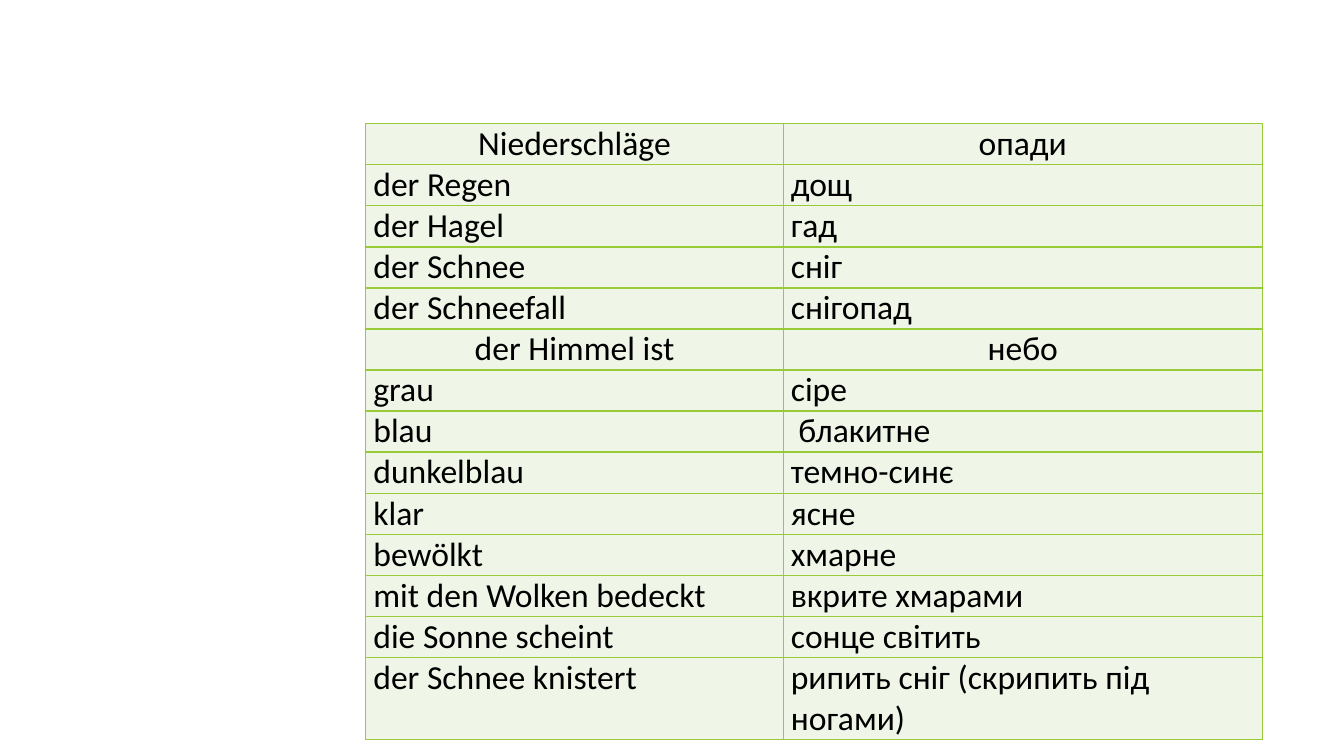
from lxml.etree import SubElement
from pptx import Presentation
from pptx.dml.color import RGBColor
from pptx.enum.text import PP_ALIGN
from pptx.oxml.ns import qn
from pptx.util import Cm, Pt

COLORS = {"text": "000000", "cell": "EFF6E8", "border": "99CB38"}

HEADINGS = {"Niederschläge", "der Himmel ist"}
VOCABULARY = [
    ("Niederschläge", "опади"),
    ("der Regen", "дощ"),
    ("der Hagel", "гад"),
    ("der Schnee", "сніг"),
    ("der Schneefall", "снігопад"),
    ("der Himmel ist", "небо"),
    ("grau", "сіре"),
    ("blau", " блакитне"),
    ("dunkelblau", "темно-синє"),
    ("klar", "ясне"),
    ("bewölkt", "хмарне"),
    ("mit den Wolken bedeckt", "вкрите хмарами"),
    ("die Sonne scheint", "сонце світить"),
    ("der Schnee knistert", "рипить сніг (скрипить під ногами)"),
]


class VocabularySlide:
    font_name = "Calibri"
    font_size = Pt(24)
    border_width = Pt(1)
    row_height = Cm(1.03)

    def __init__(self, presentation):
        self.slide = presentation.slides.add_slide(presentation.slide_layouts[6])

    def add_table(self, rows, left, top, column_widths):
        shape = self.slide.shapes.add_table(
            len(rows), len(column_widths), left, top,
            sum(column_widths), self.row_height * len(rows))
        table = shape.table
        for column, width in zip(table.columns, column_widths):
            column.width = width
        for row_index, texts in enumerate(rows):
            table.rows[row_index].height = self.row_height
            is_heading = texts[0] in HEADINGS
            for column_index, text in enumerate(texts):
                if is_heading:
                    alignment = PP_ALIGN.CENTER
                else:
                    alignment = (PP_ALIGN.JUSTIFY, PP_ALIGN.LEFT)[column_index]
                self.fill_cell(table.cell(row_index, column_index), text, alignment)

    def fill_cell(self, cell, text, alignment):
        cell.margin_left = cell.margin_right = Cm(0.19)
        cell.margin_top = cell.margin_bottom = 0
        self.add_borders(cell)
        cell.fill.solid()
        cell.fill.fore_color.rgb = RGBColor.from_string(COLORS["cell"])
        cell.text_frame.text = text
        paragraph = cell.text_frame.paragraphs[0]
        paragraph.alignment = alignment
        font = paragraph.runs[0].font
        font.name = self.font_name
        font.size = self.font_size
        font.bold = False
        font.color.rgb = RGBColor.from_string(COLORS["text"])

    def add_borders(self, cell):
        properties = cell._tc.get_or_add_tcPr()
        for side in ("lnL", "lnR", "lnT", "lnB"):
            line = SubElement(properties, qn(f"a:{side}"), w=str(self.border_width))
            fill = SubElement(line, qn("a:solidFill"))
            SubElement(fill, qn("a:srgbClr"), val=COLORS["border"])


def main():
    presentation = Presentation()
    presentation.slide_width = Cm(33.87)
    presentation.slide_height = Cm(19.05)

    # German and Ukrainian weather words
    weather = VocabularySlide(presentation)
    weather.add_table(VOCABULARY, Cm(9.22), Cm(3.12), [Cm(10.52), Cm(12.07)])

    presentation.save("out.pptx")


if __name__ == "__main__":
    main()
